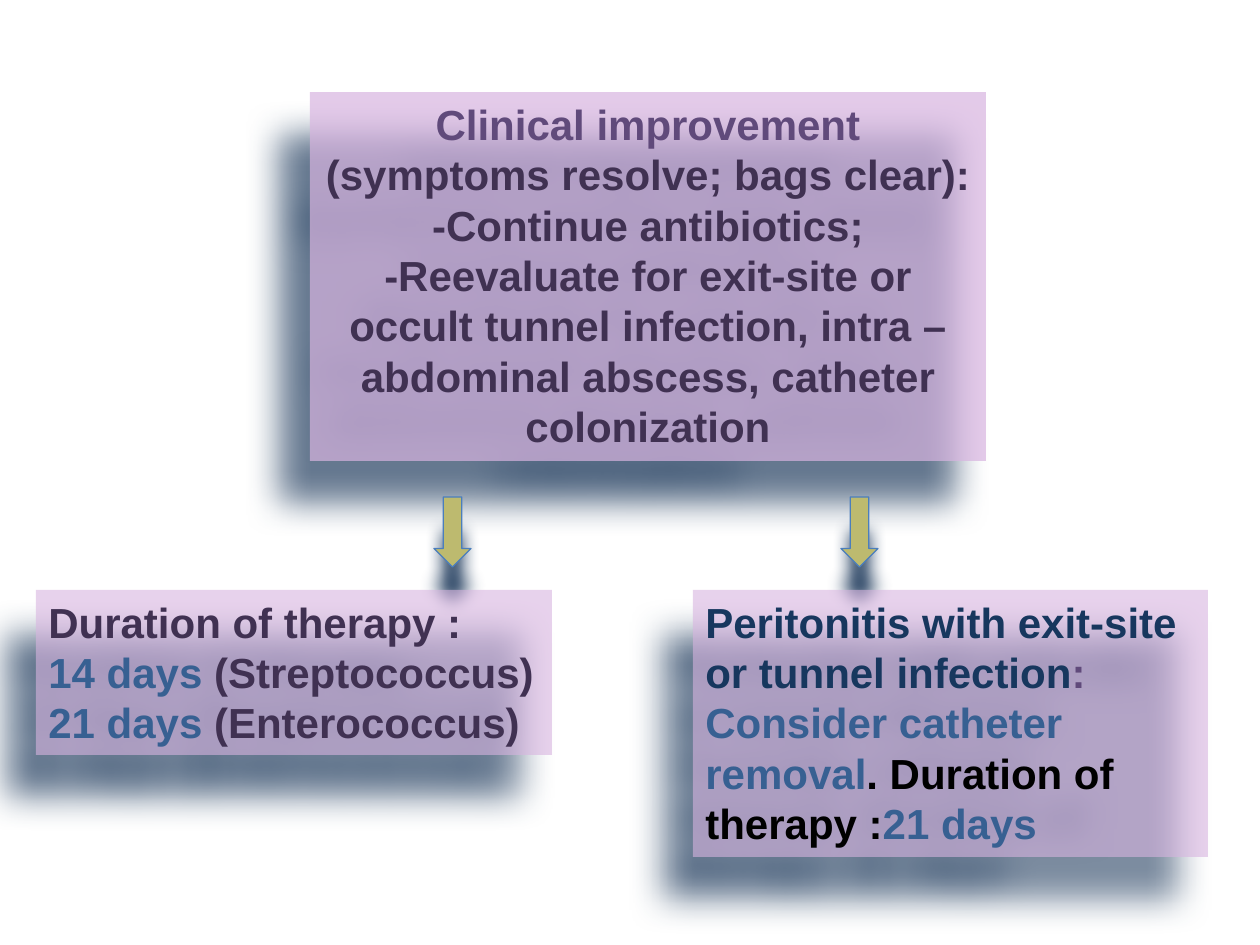
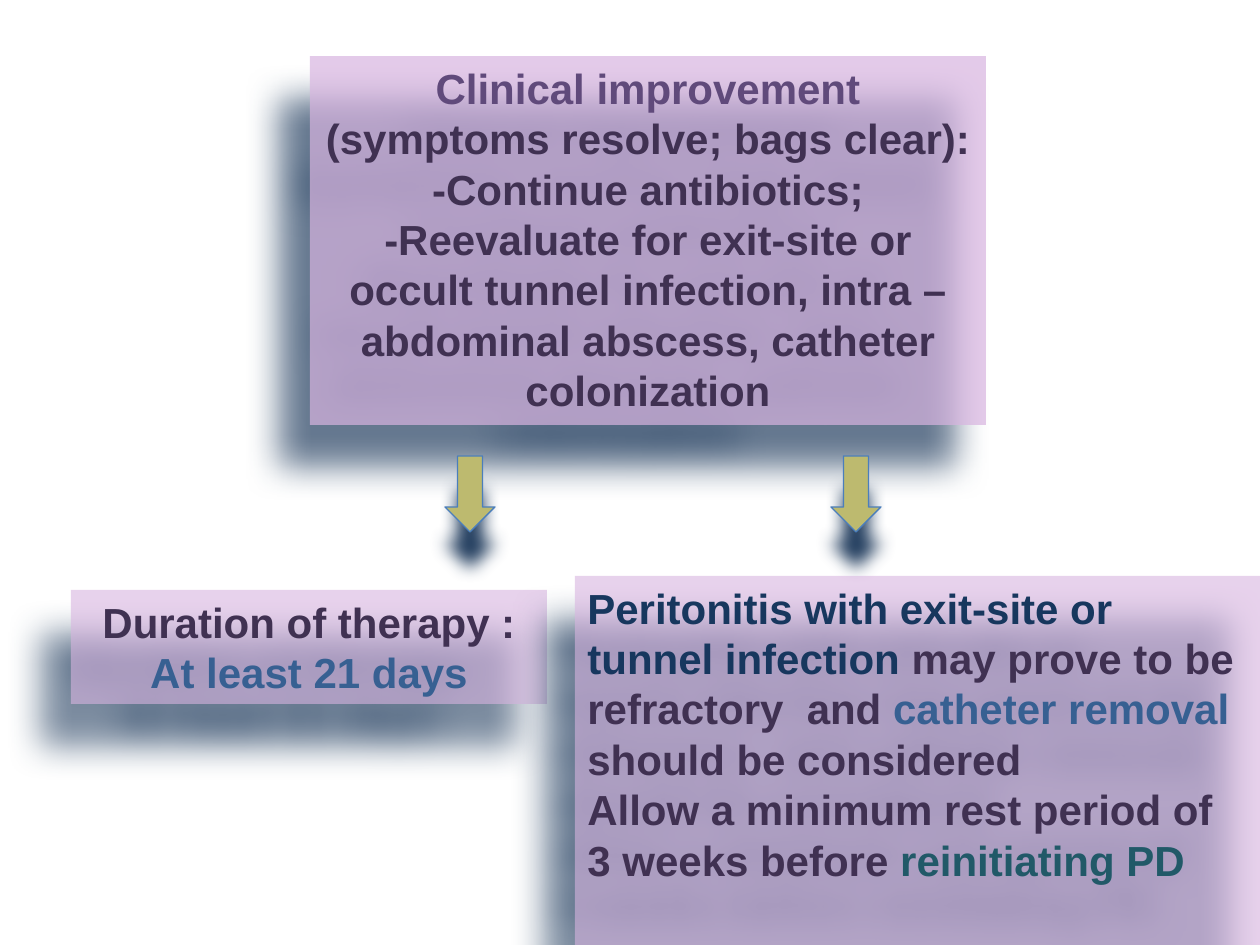
from lxml import etree
from pptx import Presentation
from pptx.dml.color import RGBColor
from pptx.enum.shapes import MSO_SHAPE
from pptx.enum.text import MSO_AUTO_SIZE, PP_ALIGN
from pptx.oxml.ns import qn
from pptx.util import Emu, Pt

LEFT, CENTER = PP_ALIGN.LEFT, PP_ALIGN.CENTER
DOWN_ARROW = MSO_SHAPE.DOWN_ARROW
NO_AUTOSIZE = MSO_AUTO_SIZE.NONE

PX_PER_INCH = 126
SLIDE_W, SLIDE_H = 1260, 945

COLORS = {
    "box": "D8B4E0", "shadow": "254061", "arrow": "BDBA6F", "arrow_line": "4B7EBC",
    "purple": "604A7B", "dark": "403152", "blue": "376092", "navy": "17375E",
    "teal": "215968", "black": "000000",
}
TEXT_FORMAT = {"name": "Arial", "size": Pt(24), "bold": True}

# Shadows: blur and distance in points, direction in degrees
BOX_SHADOW = (20, 30, 125)
ARROW_SHADOW = (10, 20, 90)

# Content: each paragraph is a list of (text, colour) runs
IMPROVEMENT = [
    [("Clinical improvement", "purple")],
    [("(symptoms resolve; bags clear):", "dark")],
    [("-Continue antibiotics;", "dark")],
    [("-Reevaluate for exit-site or occult tunnel infection, intra –abdominal "
      "abscess, catheter colonization", "dark")],
]
DURATION_BY_ORGANISM = [
    [("Duration of therapy :", "dark")],
    [("14 days ", "blue"), ("(Streptococcus)", "dark")],
    [("21 days ", "blue"), ("(Enterococcus)", "dark")],
]
REMOVE_CATHETER = [
    [("Peritonitis with exit-site or tunnel infection", "navy"), (": ", "purple"),
     ("Consider catheter removal", "blue"), (". Duration of therapy :", "black"),
     ("21 days", "blue")],
]
DURATION_MINIMUM = [
    [("Duration of therapy :", "dark")],
    [("At least 21 days", "blue")],
]
REFRACTORY = [
    [("Peritonitis with exit-site or tunnel infection ", "navy"),
     ("may prove to be refractory  and ", "dark"), ("catheter removal ", "blue"),
     ("should be considered", "dark")],
    [("Allow a minimum rest period of 3 weeks before ", "dark"),
     ("reinitiating PD", "teal")],
]

# Slides: outcomes are (place, alignment, paragraphs), places are px
SLIDES = [
    {
        "improvement_top": 92,
        "arrow_lefts": (434, 841), "arrow_top": 497, "arrow_size": (37, 70),
        "outcomes": [
            ((36, 590, 516, 165), LEFT, DURATION_BY_ORGANISM),
            ((693, 590, 515, 267), LEFT, REMOVE_CATHETER),
        ],
    },
    {
        "improvement_top": 56,
        "arrow_lefts": (445, 831), "arrow_top": 456, "arrow_size": (50, 76),
        "outcomes": [
            ((71, 590, 476, 114), CENTER, DURATION_MINIMUM),
            ((575, 576, 685, 369), LEFT, REFRACTORY),
        ],
    },
]


def px(n):
    return Emu(round(n * 914400 / PX_PER_INCH))


def rgb(name):
    return RGBColor.from_string(COLORS[name])


def fill_shape(sp, color, opacity=100):
    sp.fill.solid()
    sp.fill.fore_color.rgb = rgb(color)
    if opacity < 100:
        clr = sp.fill._xPr.find(qn("a:solidFill"))[0]
        etree.SubElement(clr, qn("a:alpha"), val=str(opacity * 1000))


def add_shadow(sp, blur, dist, angle):
    sp.shadow.inherit = False
    effects = sp._element.spPr.find(qn("a:effectLst"))
    shadow = etree.SubElement(
        effects, qn("a:outerShdw"), blurRad=str(Pt(blur)), dist=str(Pt(dist)),
        dir=str(angle * 60000), algn="ctr", rotWithShape="0")
    etree.SubElement(shadow, qn("a:srgbClr"), val=COLORS["shadow"])


def add_box(s, place, opacity, align, paragraphs):
    sp = s.shapes.add_textbox(*map(px, place))
    fill_shape(sp, "box", opacity)
    add_shadow(sp, *BOX_SHADOW)
    tf = sp.text_frame
    tf.word_wrap = True
    tf.auto_size = NO_AUTOSIZE
    for i, runs in enumerate(paragraphs):
        p = tf.add_paragraph() if i else tf.paragraphs[0]
        p.alignment = align
        for text, color in runs:
            r = p.add_run()
            r.text = text
            r.font.color.rgb = rgb(color)
            for key, value in TEXT_FORMAT.items():
                setattr(r.font, key, value)


def add_arrow(s, left, top, size):
    sp = s.shapes.add_shape(DOWN_ARROW, *map(px, (left, top, *size)))
    fill_shape(sp, "arrow")
    sp.line.color.rgb = rgb("arrow_line")
    sp.line.width = Pt(0.75)
    add_shadow(sp, *ARROW_SHADOW)


def main():
    prs = Presentation()
    prs.slide_width, prs.slide_height = px(SLIDE_W), px(SLIDE_H)
    blank = prs.slide_layouts[6]
    for plan in SLIDES:
        s = prs.slides.add_slide(blank)
        # Shared finding at the top
        add_box(s, (310, plan["improvement_top"], 676, 369), 70, CENTER, IMPROVEMENT)
        # Arrows down to the two outcomes
        for left in plan["arrow_lefts"]:
            add_arrow(s, left, plan["arrow_top"], plan["arrow_size"])
        # Outcomes
        for place, align, paragraphs in plan["outcomes"]:
            add_box(s, place, 60, align, paragraphs)
    prs.save("out.pptx")


if __name__ == "__main__":
    main()
